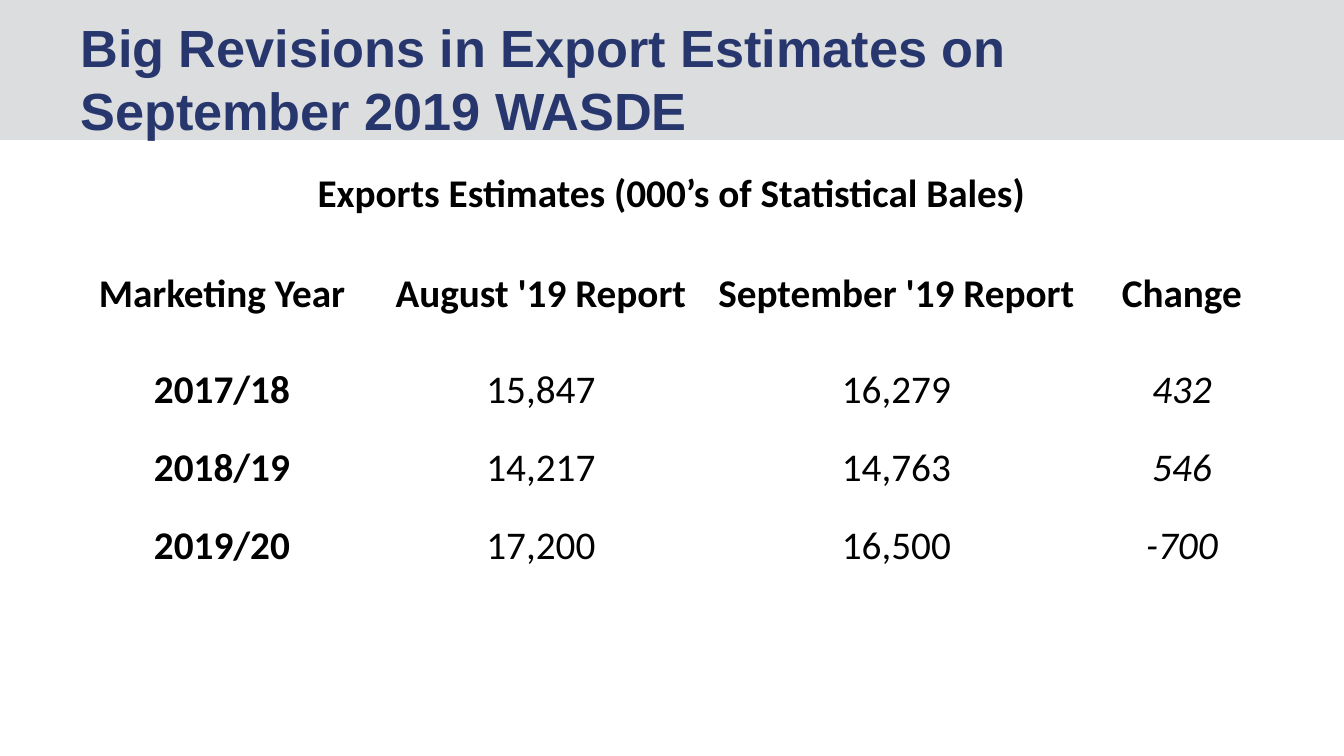
from pptx import Presentation
from pptx.dml.color import RGBColor
from pptx.enum.shapes import MSO_SHAPE as Shape
from pptx.enum.text import MSO_ANCHOR as Anchor, MSO_AUTO_SIZE as AutoSize, PP_ALIGN as Align
from pptx.util import Emu, Pt

EMU_PER_PX = 914400 / 134.4
COLORS = {"band": "DCDDDE", "title": "27376E", "text": "000000"}
TITLE = "Big Revisions in Export Estimates on September 2019 WASDE"
CAPTION = "Exports Estimates (000’s of Statistical Bales)"
HEADERS = ["Marketing Year", "August '19 Report", "September '19 Report", "Change"]
ESTIMATES = [
    ["2017/18", "15,847", "16,279", "432"],
    ["2018/19", "14,217", "14,763", "546"],
    ["2019/20", "17,200", "16,500", "-700"],
]
COLUMN_WIDTHS = [310, 328, 383, 188]
ROW_HEIGHTS = [86, 114, 78, 78, 78]


def px(length):
    return Emu(round(length * EMU_PER_PX))


def color(name):
    return RGBColor.from_string(COLORS[name])


class SlideBuilder:
    title_font = {"name": "Arial", "size": Pt(28), "bold": True}
    table_font = {"name": "Calibri", "size": Pt(21)}
    cell_format = {"vertical_anchor": Anchor.MIDDLE, "margin_left": px(1),
                   "margin_right": px(1), "margin_top": px(1), "margin_bottom": 0}

    def __init__(self, page):
        self.page = page

    def add_text(self, frame, text, font, tint, align):
        para = frame.paragraphs[0]
        para.alignment = align
        span = para.add_run()
        span.text = text
        for name, value in font.items():
            setattr(span.font, name, value)
        span.font.color.rgb = color(tint)

    def title(self, text, *bounds):
        box = self.page.shapes.title
        box.left, box.top, box.width, box.height = map(px, bounds)
        frame = box.text_frame
        frame.word_wrap = True
        frame.auto_size = AutoSize.NONE
        frame.vertical_anchor = Anchor.MIDDLE
        self.add_text(frame, text, self.title_font, "title", Align.LEFT)

    def band(self, *bounds):
        band = self.page.shapes.add_shape(Shape.RECTANGLE, *map(px, bounds))
        band.shadow.inherit = False
        band.fill.solid()
        band.fill.fore_color.rgb = color("band")
        band.line.fill.background()
        # Keep the band behind the title
        self.page.shapes.title.element.addprevious(band.element)

    def table(self, rows, left, top):
        size = sum(COLUMN_WIDTHS), sum(ROW_HEIGHTS)
        table = self.page.shapes.add_table(
            len(ROW_HEIGHTS), len(COLUMN_WIDTHS), *map(px, (left, top, *size))).table
        table.first_row = table.horz_banding = False
        for column, width in zip(table.columns, COLUMN_WIDTHS):
            column.width = px(width)
        for row, height in zip(table.rows, ROW_HEIGHTS):
            row.height = px(height)
        for cell in table.iter_cells():
            cell.fill.background()
            for name, value in self.cell_format.items():
                setattr(cell, name, value)
        table.cell(0, 0).merge(table.cell(0, len(COLUMN_WIDTHS) - 1))

        # Headings and years are bold, changes are italic
        for row, texts in enumerate(rows):
            for column, text in enumerate(texts):
                font = {**self.table_font, "bold": row < 2 or column == 0,
                        "italic": row >= 2 and column == 3}
                self.add_text(table.cell(row, column).text_frame, text, font, "text", Align.CENTER)


def main():
    deck = Presentation()
    deck.slide_width, deck.slide_height = px(1344), px(756)
    builder = SlideBuilder(deck.slides.add_slide(deck.slide_layouts[5]))

    # Heading
    builder.band(0, 0, 1344, 140)
    builder.title(TITLE, 67, 31, 1150, 95)

    # Export estimates
    builder.table([[CAPTION], HEADERS, *ESTIMATES], 67, 151)

    deck.save("out.pptx")


if __name__ == "__main__":
    main()
